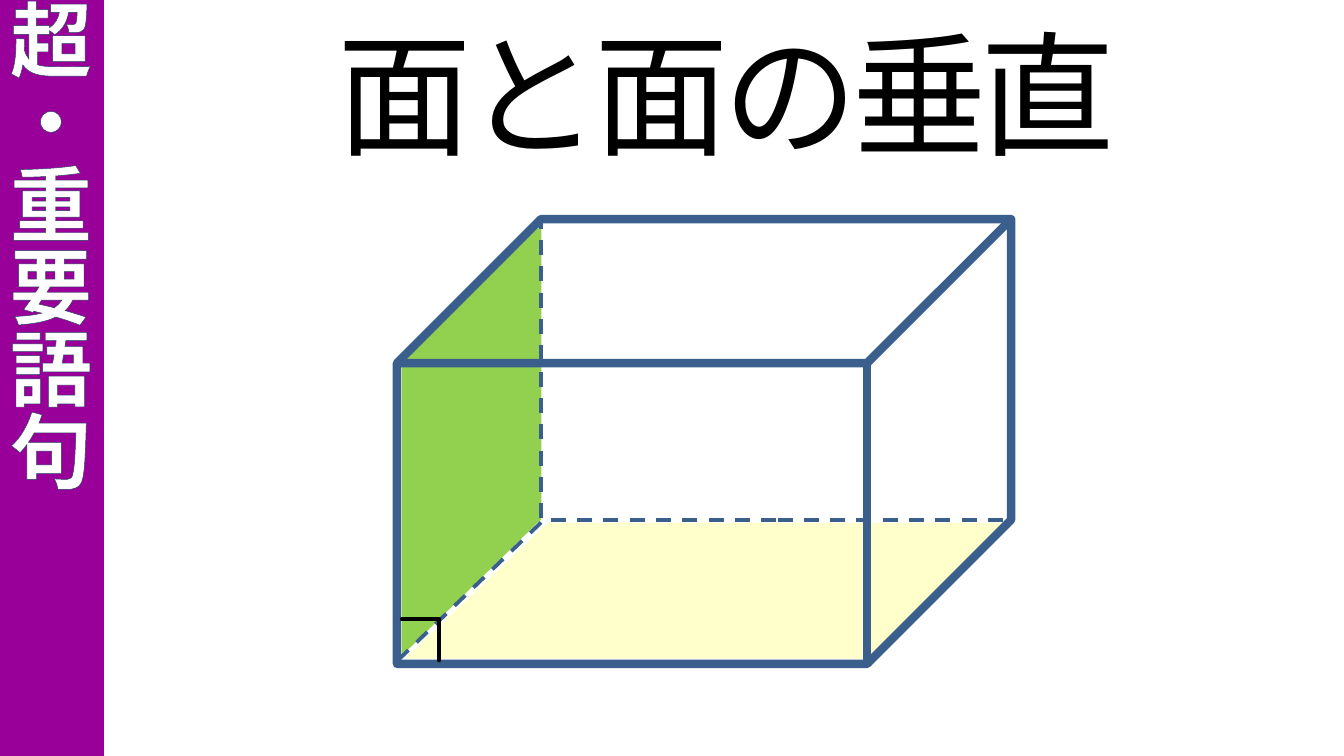
from dataclasses import dataclass
from lxml.etree import SubElement as Sub
from pptx import Presentation
from pptx.dml.color import RGBColor as Rgb
from pptx.enum.dml import MSO_LINE as Dash
from pptx.enum.lang import MSO_LANGUAGE_ID as Lang
from pptx.enum.shapes import MSO_CONNECTOR as Link, MSO_SHAPE as Kind
from pptx.enum.text import MSO_ANCHOR as Anchor, MSO_AUTO_SIZE as Fit, PP_ALIGN as Align
from pptx.oxml.ns import qn
from pptx.util import Inches, Pt


@dataclass(frozen=True)
class Theme:
    """Hold the colours, type sizes and line widths."""
    font: str = "Noto Sans CJK JP"
    band: str = "990099"
    wall: str = "92D050"
    floor: str = "FFFFCC"
    edge: str = "3A5F8C"
    rim: str = "254061"
    ink: str = "000000"
    paper: str = "FFFFFF"
    head: int = 72
    side: int = 44
    thick: float = 4.5
    thin: float = 2


def write(frame, text, font, size, color, bold=False, space=None, rim=None, lead=None):
    """Put one centred run of formatted text in a frame."""
    para = frame.paragraphs[0]
    para.alignment = Align.CENTER
    if lead:
        para.line_spacing = Pt(lead)
    run = para.add_run()
    run.text = text
    run.font.size, run.font.bold, run.font.name = Pt(size), bold, font
    run.font.color.rgb = Rgb.from_string(color)
    run.font.language_id = Lang.JAPANESE
    props = run.font._element
    Sub(props, qn("a:ea"), typeface=font)
    if space:
        props.set("spc", str(space * 100))
    if rim:
        line = Sub(props, qn("a:ln"), w=str(Pt(0.75)))
        Sub(Sub(line, qn("a:solidFill")), qn("a:srgbClr"), val=rim)
        props.insert(0, line)


class Page:
    """Draw on one slide with a grid of 100 columns, each a tenth of an inch."""

    def __init__(self, deck, theme):
        """Add a title-only slide."""
        self.theme = theme
        self.cell = deck.slide_width / 100
        self.slide = deck.slides.add_slide(deck.slide_layouts[5])

    def grid(self, *vals):
        """Turn grid units into lengths."""
        return [round(val * self.cell) for val in vals]

    def stroke(self, line, color, width, dash=False):
        """Style a line with round joins."""
        line.color.rgb = Rgb.from_string(color)
        line.width = Pt(width)
        if dash:
            line.dash_style = Dash.DASH
        Sub(line._get_or_add_ln(), qn("a:round"))

    def title(self, text, box):
        """Move and fill the title placeholder."""
        head = self.slide.shapes.title
        head.left, head.top, head.width, head.height = self.grid(*box)
        frame = head.text_frame
        frame.auto_size, frame.word_wrap = Fit.NONE, False
        frame.vertical_anchor = Anchor.MIDDLE
        write(frame, text, self.theme.font, self.theme.head, self.theme.ink, space=-3)

    def shape(self, kind, box, fill=None, line=None, width=2, dash=False, adj=(), turn=0, flip=False):
        """Add a preset shape; a quarter turn keeps the visible box."""
        x, y, w, h = box
        if turn == 90:
            x, y, w, h = x + (w - h) / 2, y + (h - w) / 2, h, w
        item = self.slide.shapes.add_shape(kind, *self.grid(x, y, w, h))
        item.shadow.inherit = False
        item.rotation = turn
        for i, val in enumerate(adj):
            item.adjustments[i] = val
        if flip:
            item._element.spPr.xfrm.set("flipV", "1")
        if fill:
            item.fill.solid()
            item.fill.fore_color.rgb = Rgb.from_string(fill)
        else:
            item.fill.background()
        if line:
            self.stroke(item.line, line, width, dash)
        else:
            item.line.fill.background()
        return item

    def line(self, start, end, color, width):
        """Add a dashed straight line."""
        item = self.slide.shapes.add_connector(Link.STRAIGHT, *self.grid(*start, *end))
        Sub(item._element.spPr, qn("a:effectLst"))
        self.stroke(item.line, color, width, True)

    def band(self, text, box):
        """Add the side band with upright text."""
        theme = self.theme
        frame = self.shape(Kind.RECTANGLE, box, theme.band).text_frame
        frame.margin_left, frame.margin_right = 0, Inches(0.08)
        frame.margin_top = 0
        frame.word_wrap, frame.auto_size = True, Fit.SHAPE_TO_FIT_TEXT
        frame.vertical_anchor = Anchor.BOTTOM
        frame._txBody.bodyPr.set("vert", "eaVert")
        write(frame, text, theme.font, theme.side, theme.paper, bold=True, rim=theme.rim, lead=50)

    def solid(self, x, y, w, h, deep):
        """Draw the box with its shaded faces and hidden edges."""
        theme = self.theme
        base, back = y + h, y + h - deep
        self.shape(Kind.PARALLELOGRAM, (x + 0.35, y + 0.4, 10.4, 32.1), theme.wall,
                   adj=(0.98,), turn=90, flip=True)
        self.shape(Kind.PARALLELOGRAM, (x + 0.6, base - 10.5, w - 0.6, 10.1), theme.floor, adj=(1.05,))
        self.shape(Kind.RECTANGLE, (x + deep, y, w - deep, h - deep),
                   line=theme.edge, width=theme.thin, dash=True)
        self.shape(Kind.CUBE, (x, y, w, h), line=theme.edge, width=theme.thick, adj=(deep / h,))
        self.line((x + deep, back + 0.2), (x + 0.1, base - 0.3), theme.edge, theme.thin)
        self.shape(Kind.HALF_FRAME, (x + 0.35, base - 3.35, 2.8, 3.1), theme.ink,
                   line=theme.ink, width=theme.thin, adj=(0, 0), turn=90)


def main():
    """Build and save the slide."""
    deck = Presentation()
    deck.slide_width = Inches(10)
    deck.slide_height = deck.slide_width * 9 // 16
    page = Page(deck, Theme())
    page.band("超・重要語句", (-0.1, -0.1, 7.84, 56.4))
    page.title("面と面の垂直", (8.3, 1.35, 91.5, 11))
    page.solid(29.54, 16.3, 45.7, 33.1, 10.72)
    deck.save("out.pptx")


if __name__ == "__main__":
    main()
